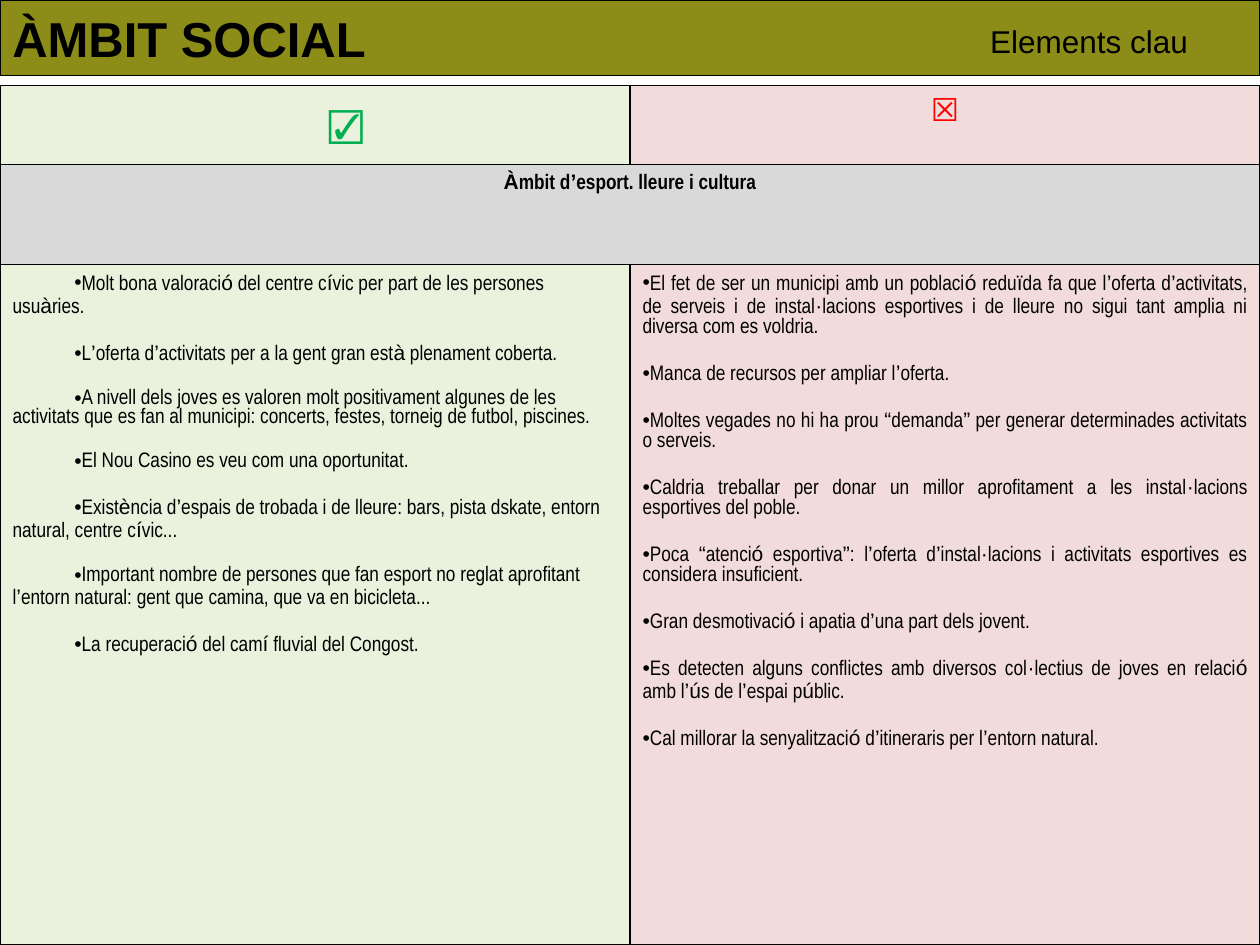
from itertools import groupby

from lxml import etree
from pptx import Presentation
from pptx import util as u
from pptx.dml.color import RGBColor
from pptx.enum import shapes, text
from pptx.oxml.ns import qn

GREEN, PINK, GREY, OLIVE, BLACK = "EAF1DD", "F2DBDB", "D9D9D9", "808000", "000000"
INDENT = 35.3
CENTER, LEFT, FULL = text.PP_ALIGN.CENTER, text.PP_ALIGN.LEFT, text.PP_ALIGN.JUSTIFY

PROS = [
    "Molt bona valoració del centre cívic per part de les persones usuàries.",
    "L’oferta d’activitats per a la gent gran està plenament coberta.",
    "A nivell dels joves es valoren molt positivament algunes de les activitats "
    "que es fan al municipi: concerts, festes, torneig de futbol, piscines.",
    "El Nou Casino es veu com una oportunitat.",
    "Existència d’espais de trobada i de lleure: bars, pista dskate, "
    "entorn natural, centre cívic...",
    "Important nombre de persones que fan esport no reglat aprofitant "
    "l’entorn natural: gent que camina, que va en bicicleta...",
    "La recuperació del camí fluvial del Congost.",
]
CONS = [
    "El fet de ser un municipi amb un població reduïda fa que l’oferta d’activitats, "
    "de serveis i de instal·lacions esportives i de lleure no sigui tant amplia "
    "ni diversa com es voldria.",
    "Manca de recursos per ampliar l’oferta.",
    "Moltes vegades no hi ha prou “demanda” per generar determinades activitats o serveis.",
    "Caldria treballar per donar un millor aprofitament a les instal·lacions "
    "esportives del poble.",
    "Poca “atenció esportiva”: l’oferta d’instal·lacions i activitats esportives "
    "es considera insuficient.",
    "Gran desmotivació i apatia d’una part dels jovent.",
    "Es detecten alguns conflictes amb diversos col·lectius de joves en relació "
    "amb l’ús de l’espai públic.",
    "Cal millorar la senyalització d’itineraris per l’entorn natural.",
]


def color(code):
    return RGBColor.from_string(code)


class Deck:
    def __init__(self, wide, high):
        self.prs = Presentation()
        self.prs.slide_width, self.prs.slide_height = u.Pt(wide), u.Pt(high)
        self.slide = self.prs.slides.add_slide(self.prs.slide_layouts[6])

    def run(self, para, words, size, font=None, tint=BLACK, bold=False):
        run = para.add_run()
        run.text = words
        run.font.size, run.font.bold = u.Pt(size), bold
        run.font.color.rgb = color(tint)
        if font:
            run.font.name = font

    def mixed(self, para, words, bold=False):
        for plain, chars in groupby(words, str.isascii):
            font = "Arial Narrow" if plain else "Arial"
            self.run(para, "".join(chars), 12, font, bold=bold)

    def indent(self, para, first):
        props = para._p.get_or_add_pPr()
        props.set("marL", "0")
        props.set("indent", str(u.Pt(first)))
        return props

    def bullets(self, cell, items, align, first=0):
        frame = cell.text_frame
        for i, words in enumerate(items):
            para = frame.add_paragraph() if i else frame.paragraphs[0]
            para.alignment = align
            if i:
                para.space_before = u.Pt(13.5)
            props = self.indent(para, first)
            etree.SubElement(props, qn("a:buFont"), typeface="Arial")
            etree.SubElement(props, qn("a:buChar"), char="•")
            self.mixed(para, words)

    def border(self, cell):
        props = cell._tc.get_or_add_tcPr()
        for i, side in enumerate(("lnL", "lnR", "lnT", "lnB")):
            line = etree.Element(qn("a:" + side), w=str(u.Pt(1)))
            fill = etree.SubElement(line, qn("a:solidFill"))
            etree.SubElement(fill, qn("a:srgbClr"), val=BLACK)
            props.insert(i, line)

    def table(self, box, rows, fills):
        spots = [u.Pt(n) for n in box]
        grid = self.slide.shapes.add_table(len(rows), len(fills[0]), *spots).table
        grid.first_row = grid.horz_banding = False
        for r, high in enumerate(rows):
            grid.rows[r].height = u.Pt(high)
            for c, tint in enumerate(fills[r]):
                cell = grid.cell(r, c)
                cell.fill.solid()
                cell.fill.fore_color.rgb = color(tint)
                self.border(cell)
        return grid

    def banner(self, box, words):
        bar = self.slide.shapes.add_shape(
            shapes.MSO_SHAPE.RECTANGLE, *[u.Pt(n) for n in box])
        bar.shadow.inherit = False
        bar.fill.solid()
        bar.fill.fore_color.rgb = color(OLIVE)
        tone = bar._element.spPr.find(qn("a:solidFill"))[0]
        etree.SubElement(tone, qn("a:alpha"), val="90000")
        bar.line.color.rgb, bar.line.width = color(BLACK), u.Pt(0.75)
        bar.text_frame.vertical_anchor = text.MSO_ANCHOR.MIDDLE
        para = bar.text_frame.paragraphs[0]
        para.alignment = LEFT
        self.run(para, words, 28, "Arial", bold=True)

    def label(self, box, words):
        note = self.slide.shapes.add_textbox(*[u.Pt(n) for n in box])
        note.text_frame.word_wrap = True
        self.run(note.text_frame.paragraphs[0], words, 18, "Arial")


def main():
    deck = Deck(720, 540)
    grid = deck.table((0, 48.75, 720, 491.25), (45.25, 57.25, 388.75),
                      ((GREEN, PINK), (GREY, GREY), (GREEN, PINK)))

    good, bad = grid.cell(0, 0), grid.cell(0, 1)
    good.margin_top = u.Pt(15)
    for cell in (good, bad):
        cell.text_frame.paragraphs[0].alignment = CENTER
    deck.indent(good.text_frame.paragraphs[0], INDENT)
    deck.run(good.text_frame.paragraphs[0], "☑", 20, "Arial Narrow", "00B050")
    deck.run(bad.text_frame.paragraphs[0], "☒", 18, tint="FF0000")

    theme = grid.cell(1, 0)
    theme.merge(grid.cell(1, 1))
    head = theme.text_frame.paragraphs[0]
    head.alignment = CENTER
    deck.mixed(head, "Àmbit d’esport. lleure i cultura", bold=True)

    deck.bullets(grid.cell(2, 0), PROS, LEFT, INDENT)
    deck.bullets(grid.cell(2, 1), CONS, FULL)

    deck.banner((0, 0, 720, 43.2), "ÀMBIT SOCIAL")
    deck.label((558.75, 8.75, 161.25, 29), "Elements clau")
    deck.prs.save("out.pptx")


if __name__ == "__main__":
    main()
